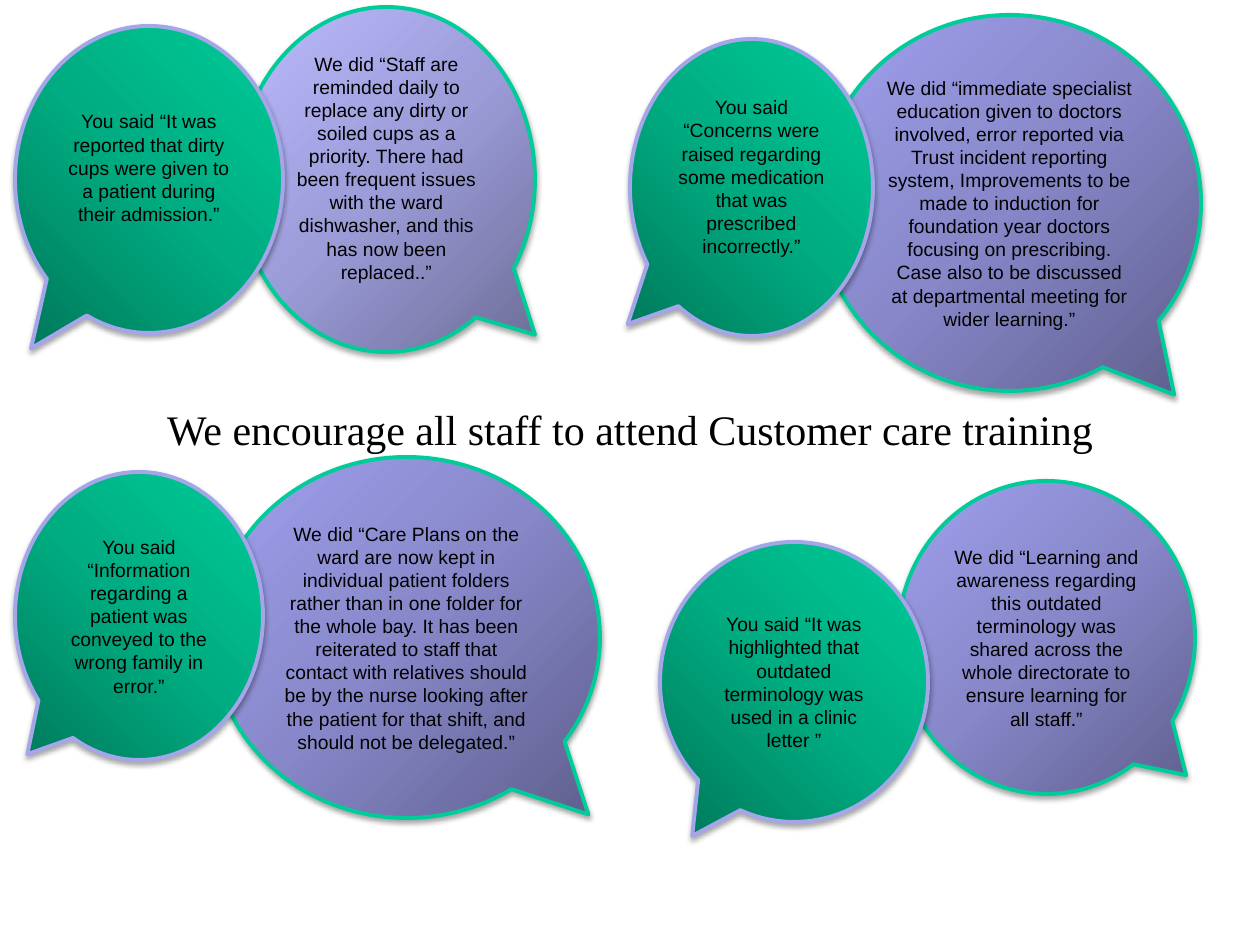
from dataclasses import dataclass

from lxml import etree
from pptx import Presentation
from pptx.dml.color import RGBColor
from pptx.enum.shapes import MSO_SHAPE
from pptx.enum.text import MSO_ANCHOR, PP_ALIGN
from pptx.oxml import parse_xml
from pptx.oxml.ns import nsdecls, qn
from pptx.util import Pt

CALLOUT = MSO_SHAPE.OVAL_CALLOUT
CENTER = PP_ALIGN.CENTER
MIDDLE, TOP = MSO_ANCHOR.MIDDLE, MSO_ANCHOR.TOP

PX_PER_INCH = 126
EMU_PER_PX = 914400 / PX_PER_INCH
INSET = 6

COLORS = {
    "text": "000000",
    "shadow": "000000",
    "green": "00CC99",
    "lilac": "A5A5E9",
}


@dataclass(frozen=True)
class Style:
    """Gradient from its focus corner outwards, with the outline colour."""
    stops: tuple[str, str, str]
    focus: str
    outline: str


BOTTOM_RIGHT = 'l="100000" t="100000"'
BOTTOM_LEFT = 't="100000" r="100000"'
SAID = Style(("00795B", "00AC81", "00CC99"), BOTTOM_LEFT, COLORS["lilac"])
DID = Style(("5F5F8D", "8787C9", "A0A0EE"), BOTTOM_RIGHT, COLORS["green"])
DID_LIGHT = Style(("6E6E98", "9C9CD9", "BBBBFF"), BOTTOM_RIGHT, COLORS["green"])


@dataclass(frozen=True)
class Bubble:
    left: int
    top: int
    width: int
    height: int
    tail: tuple[float, float]
    style: Style
    text: str
    bottom_inset: int = INSET


# Speech bubbles, from back to front
BUBBLES = [
    Bubble(898, 481, 297, 313, (0.47, 0.44), DID,
           "We did “Learning and awareness regarding this outdated terminology "
           "was shared across the whole directorate to ensure learning for all "
           "staff.”"),
    Bubble(213, 457, 387, 361, (0.47, 0.49), DID,
           "We did “Care Plans on the ward are now kept in individual patient "
           "folders rather than in one folder for the whole bay. It has been "
           "reiterated to staff that contact with relatives should be by the "
           "nurse looking after the patient for that shift, and should not be "
           "delegated.”"),
    Bubble(15, 472, 248, 288, (-0.45, 0.48), SAID,
           "You said “Information regarding a patient was conveyed to the wrong "
           "family in error.”"),
    Bubble(238, 7, 297, 345, (0.5, 0.45), DID_LIGHT,
           "We did “Staff are reminded daily to replace any dirty or soiled cups "
           "as a priority. There had been frequent issues with the ward "
           "dishwasher, and this has now been replaced..”", 30),
    Bubble(818, 15, 383, 376, (0.43, 0.51), DID,
           "We did “immediate specialist education given to doctors involved, "
           "error reported via Trust incident reporting system, Improvements to "
           "be made to induction for foundation year doctors focusing on "
           "prescribing. Case also to be discussed at departmental meeting for "
           "wider learning.”"),
    Bubble(660, 542, 268, 280, (-0.38, 0.55), SAID,
           "You said “It was highlighted that outdated terminology was used in "
           "a clinic letter ”"),
    Bubble(630, 39, 243, 297, (-0.51, 0.46), SAID,
           "You said “Concerns were raised regarding some medication that was "
           "prescribed incorrectly.”", 28),
    Bubble(15, 26, 268, 307, (-0.44, 0.55), SAID,
           "You said “It was reported that dirty cups were given to a patient "
           "during their admission.”", 30),
]


def px(length: int) -> int:
    return round(length * EMU_PER_PX)


def write_text(shape, text: str, *, font: str, size: int, anchor,
               top_inset: int = INSET, bottom_inset: int = INSET) -> None:
    frame = shape.text_frame
    frame.word_wrap = True
    frame.vertical_anchor = anchor
    frame.margin_top = px(top_inset)
    frame.margin_bottom = px(bottom_inset)
    paragraph = frame.paragraphs[0]
    paragraph.alignment = CENTER
    run = paragraph.add_run()
    run.text = text
    run.font.name = font
    run.font.size = Pt(size)
    run.font.color.rgb = RGBColor.from_string(COLORS["text"])


def set_gradient(shape, style: Style) -> None:
    stops = "".join(
        f'<a:gs pos="{index * 50000}"><a:srgbClr val="{color}"/></a:gs>'
        for index, color in enumerate(style.stops))
    gradient = parse_xml(
        f'<a:gradFill {nsdecls("a")} rotWithShape="1"><a:gsLst>{stops}</a:gsLst>'
        f'<a:path path="circle"><a:fillToRect {style.focus}/></a:path>'
        '</a:gradFill>')
    shape._element.spPr.find(qn("a:prstGeom")).addnext(gradient)


def set_shadow(shape) -> None:
    shape.shadow.inherit = False
    effects = shape._element.spPr.find(qn("a:effectLst"))
    shadow = etree.SubElement(
        effects, qn("a:outerShdw"), blurRad=str(Pt(3.1)), dist=str(Pt(1.8)),
        dir="5400000", rotWithShape="0")
    color = etree.SubElement(shadow, qn("a:srgbClr"), val=COLORS["shadow"])
    etree.SubElement(color, qn("a:alpha"), val="35000")


def draw_bubble(slide, bubble: Bubble) -> None:
    shape = slide.shapes.add_shape(
        CALLOUT, px(bubble.left), px(bubble.top),
        px(bubble.width), px(bubble.height))
    shape.adjustments[0], shape.adjustments[1] = bubble.tail
    set_gradient(shape, bubble.style)
    shape.line.color.rgb = RGBColor.from_string(bubble.style.outline)
    shape.line.width = Pt(2.25)
    set_shadow(shape)
    write_text(shape, bubble.text, font="Arial", size=11, anchor=MIDDLE,
               bottom_inset=bubble.bottom_inset)


def draw_heading(slide) -> None:
    box = slide.shapes.add_textbox(px(95), px(393), px(1071), px(63))
    write_text(box, "We encourage all staff to attend Customer care training",
               font="Times New Roman", size=24, anchor=TOP,
               top_inset=11, bottom_inset=4)


def main() -> None:
    presentation = Presentation()
    presentation.slide_width = px(1260)
    presentation.slide_height = px(945)
    slide = presentation.slides.add_slide(presentation.slide_layouts[6])

    # The heading lies just above the rearmost bubble
    draw_bubble(slide, BUBBLES[0])
    draw_heading(slide)
    for bubble in BUBBLES[1:]:
        draw_bubble(slide, bubble)

    presentation.save("out.pptx")


if __name__ == "__main__":
    main()
